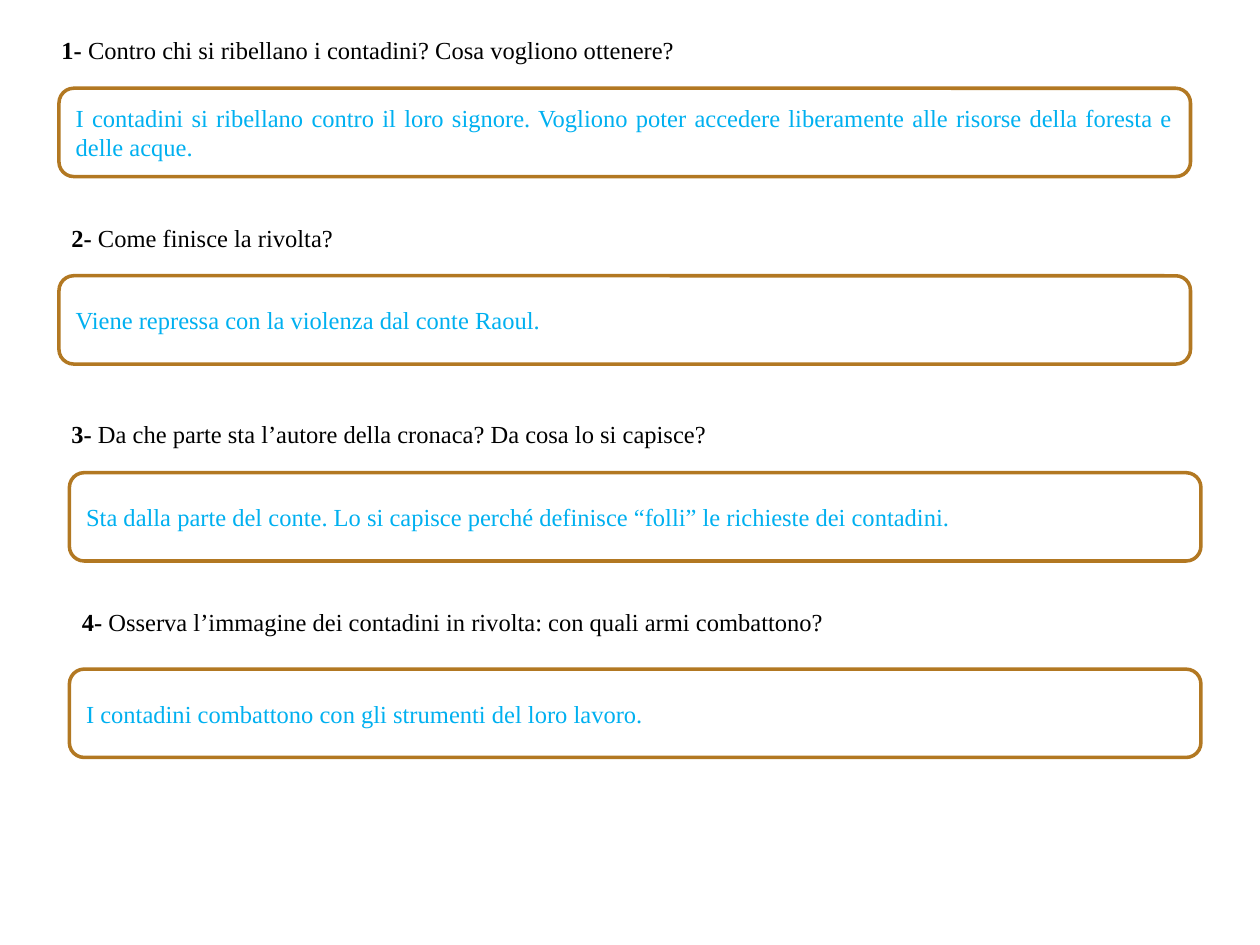
"""Build a slide of four questions, each with its answer in a rounded frame."""
from dataclasses import dataclass

from pptx import Presentation
from pptx.dml.color import RGBColor
from pptx.enum.shapes import MSO_SHAPE
from pptx.enum.text import MSO_ANCHOR, MSO_AUTO_SIZE, PP_ALIGN
from pptx.slide import Slide
from pptx.text.text import _Paragraph
from pptx.util import Cm, Pt

ROUND = MSO_SHAPE.ROUNDED_RECTANGLE
MIDDLE = MSO_ANCHOR.MIDDLE
GROW = MSO_AUTO_SIZE.SHAPE_TO_FIT_TEXT
JUSTIFY = PP_ALIGN.JUSTIFY
FONT = "Times New Roman"
COLORS = {"ask": "000000", "reply": "00B0F0", "fill": "FFFFFF", "line": "B27822"}
WIDE = 23.83


@dataclass
class Item:
    ask: str
    reply: str
    ask_x: float
    ask_y: float
    box_x: float
    box_y: float
    width: float = WIDE


ITEMS = [
    Item("Contro chi si ribellano i contadini? Cosa vogliono ottenere?",
         "I contadini si ribellano contro il loro signore. Vogliono poter accedere "
         "liberamente alle risorse della foresta e delle acque.",
         0.99, 0.58, 1.19, 1.78),
    Item("Come finisce la rivolta?",
         "Viene repressa con la violenza dal conte Raoul.",
         1.19, 4.37, 1.19, 5.56),
    Item("Da che parte sta l’autore della cronaca? Da cosa lo si capisce?",
         "Sta dalla parte del conte. Lo si capisce perché definisce “folli” "
         "le richieste dei contadini.",
         1.19, 8.33, 1.4, 9.53),
    Item("Osserva l’immagine dei contadini in rivolta: con quali armi combattono?",
         "I contadini combattono con gli strumenti del loro lavoro.",
         1.4, 12.12, 1.4, 13.49, 16.87),
]


def tint(name: str) -> RGBColor:
    return RGBColor.from_string(COLORS[name])


def add_run(para: _Paragraph, text: str, color: str, bold: bool = False) -> None:
    run = para.add_run()
    run.text = text
    run.font.name = FONT
    run.font.size = Pt(14)
    run.font.bold = bold
    run.font.color.rgb = tint(color)


def add_ask(slide: Slide, num: int, item: Item) -> None:
    box = slide.shapes.add_textbox(
        Cm(item.ask_x), Cm(item.ask_y), Cm(item.width), Cm(0.86))
    frame = box.text_frame
    frame.word_wrap = True
    frame.auto_size = GROW
    para = frame.paragraphs[0]
    para.alignment = JUSTIFY
    add_run(para, f"{num}- ", "ask", True)
    add_run(para, item.ask, "ask")


def add_reply(slide: Slide, item: Item) -> None:
    box = slide.shapes.add_shape(
        ROUND, Cm(item.box_x), Cm(item.box_y), Cm(22.81), Cm(1.78))
    box.shadow.inherit = False
    box.fill.solid()
    box.fill.fore_color.rgb = tint("fill")
    box.line.color.rgb = tint("line")
    box.line.width = Pt(2)
    frame = box.text_frame
    frame.word_wrap = True
    frame.vertical_anchor = MIDDLE
    para = frame.paragraphs[0]
    para.alignment = JUSTIFY
    add_run(para, item.reply, "reply")


def main() -> None:
    deck = Presentation()
    deck.slide_width, deck.slide_height = Cm(25.4), Cm(19.05)
    slide = deck.slides.add_slide(deck.slide_layouts[6])
    for num, item in enumerate(ITEMS, 1):
        add_ask(slide, num, item)
        add_reply(slide, item)
    deck.save("out.pptx")


if __name__ == "__main__":
    main()
